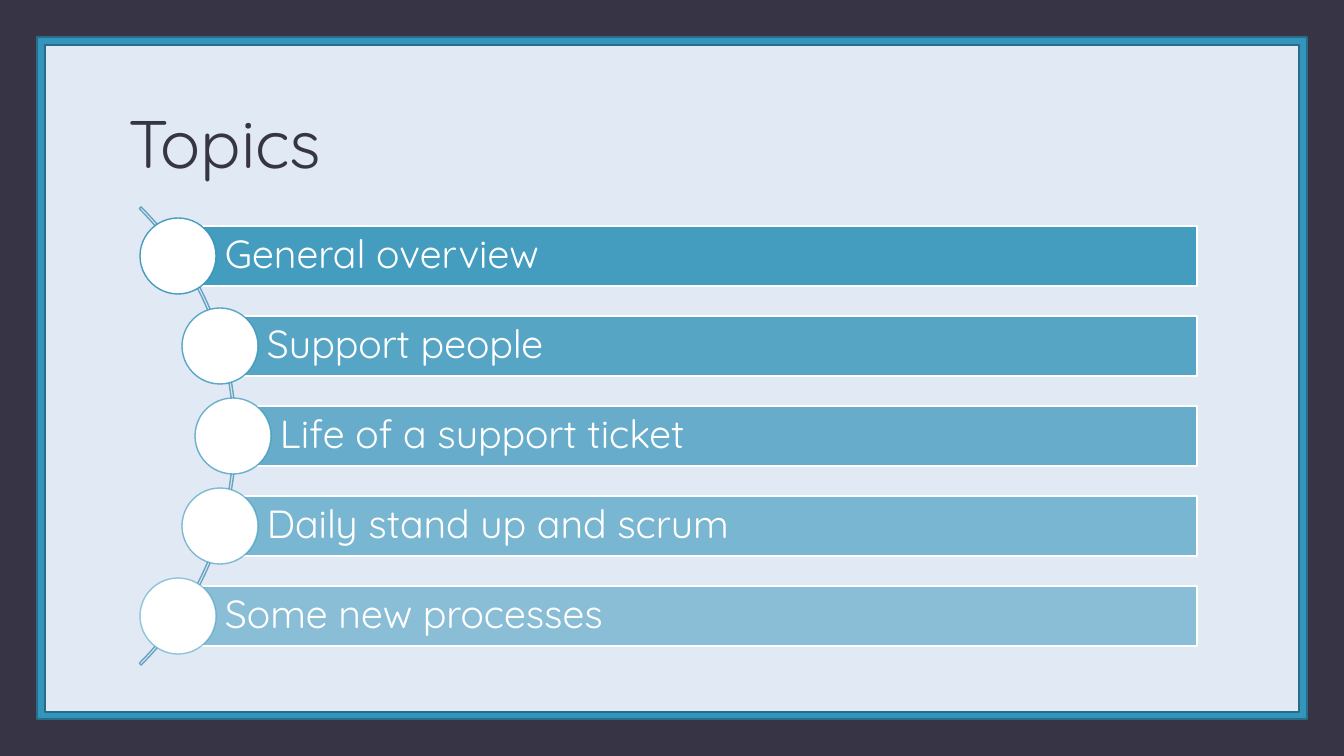
"""Build the Topics slide: a framed page with five bars strung along an arc."""
from math import sqrt

from lxml.etree import SubElement
from pptx import Presentation
from pptx.dml.color import RGBColor
from pptx.enum.shapes import MSO_SHAPE
from pptx.enum.text import MSO_ANCHOR, MSO_AUTO_SIZE, PP_ALIGN
from pptx.oxml.ns import qn
from pptx.util import Emu, Pt

THEME = {
    "font": "Quicksand",
    "dark": RGBColor.from_string("373545"),
    "accent": RGBColor.from_string("3494BA"),
    "edge": RGBColor.from_string("266D8A"),
    "panel": RGBColor.from_string("E1E9F5"),
    "arc": RGBColor.from_string("67A3C2"),
    "white": RGBColor.from_string("FFFFFF"),
    "title_size": Pt(48),
    "topic_size": Pt(28),
    "line_width": Pt(1),
}
TOPICS = [
    "General overview",
    "Support people",
    "Life of a support ticket",
    "Daily stand up and scrum",
    "Some new processes",
]
PX = 914400 / 100.8
ARC_X, ARC_Y, ARC_RADIUS = -88, 436, 324
ORBIT = 321
ROW_STEP, BAR_HEIGHT, BAR_RIGHT, DOT_SIZE = 90, 60, 1197, 76


def px(length):
    return Emu(round(length * PX))


def add_box(kind, left, top, width, height, fill, line):
    box = page.shapes.add_shape(kind, px(left), px(top), px(width), px(height))
    box.shadow.inherit = False
    box.fill.solid()
    box.fill.fore_color.rgb = THEME[fill]
    box.line.color.rgb = THEME[line]
    box.line.width = THEME["line_width"]
    return box


deck = Presentation()
deck.slide_width, deck.slide_height = px(1344), px(756)
page = deck.slides.add_slide(deck.slide_layouts[5])
page.background.fill.solid()
page.background.fill.fore_color.rgb = THEME["dark"]

frame = add_box(MSO_SHAPE.RECTANGLE, 37, 37, 1270, 682, "accent", "edge")
panel = add_box(MSO_SHAPE.RECTANGLE, 45, 45, 1254, 667, "panel", "edge")

title = page.shapes.title
page.shapes._spTree.append(title._element)
title.left, title.top, title.width, title.height = px(118), px(71), px(1109), px(151)
title.text_frame.text = "Topics"
title.text_frame.auto_size = MSO_AUTO_SIZE.NONE
title.text_frame.vertical_anchor = MSO_ANCHOR.MIDDLE
heading = title.text_frame.paragraphs[0]
heading.alignment = PP_ALIGN.LEFT
heading.line_spacing = 0.9
heading.font.name = THEME["font"]
heading.font.size = THEME["title_size"]
heading.font.color.rgb = THEME["dark"]

arc = add_box(MSO_SHAPE.BLOCK_ARC, ARC_X - ARC_RADIUS, ARC_Y - ARC_RADIUS,
              2 * ARC_RADIUS, 2 * ARC_RADIUS, "arc", "arc")
arc.fill.background()
for index, value in enumerate((189, 27, 0.004)):
    arc.adjustments[index] = value

for row, topic in enumerate(TOPICS):
    offset = (row - 2) * ROW_STEP
    middle = ARC_Y + offset
    center = round(ARC_X + sqrt(ORBIT ** 2 - offset ** 2))
    opacity = str((90 - 10 * row) * 1000)

    bar = add_box(MSO_SHAPE.RECTANGLE, center, middle - BAR_HEIGHT // 2,
                  BAR_RIGHT - center, BAR_HEIGHT, "accent", "white")
    text = bar.text_frame
    text.word_wrap = True
    text.vertical_anchor = MSO_ANCHOR.MIDDLE
    text.margin_left = px(47)
    text.margin_top = text.margin_right = text.margin_bottom = px(8)
    para = text.paragraphs[0]
    para.text = topic
    para.alignment = PP_ALIGN.LEFT
    para.line_spacing = 0.9
    para.font.name = THEME["font"]
    para.font.size = THEME["topic_size"]
    para.font.color.rgb = THEME["white"]

    dot = add_box(MSO_SHAPE.OVAL, center - DOT_SIZE // 2, middle - DOT_SIZE // 2,
                  DOT_SIZE, DOT_SIZE, "white", "accent")
    bar_color = bar._element.spPr.find(qn("a:solidFill"))[0]
    dot_color = dot._element.spPr.find(qn("a:ln")).find(qn("a:solidFill"))[0]
    for color in (bar_color, dot_color):
        SubElement(color, qn("a:alpha"), val=opacity)

deck.save("out.pptx")
